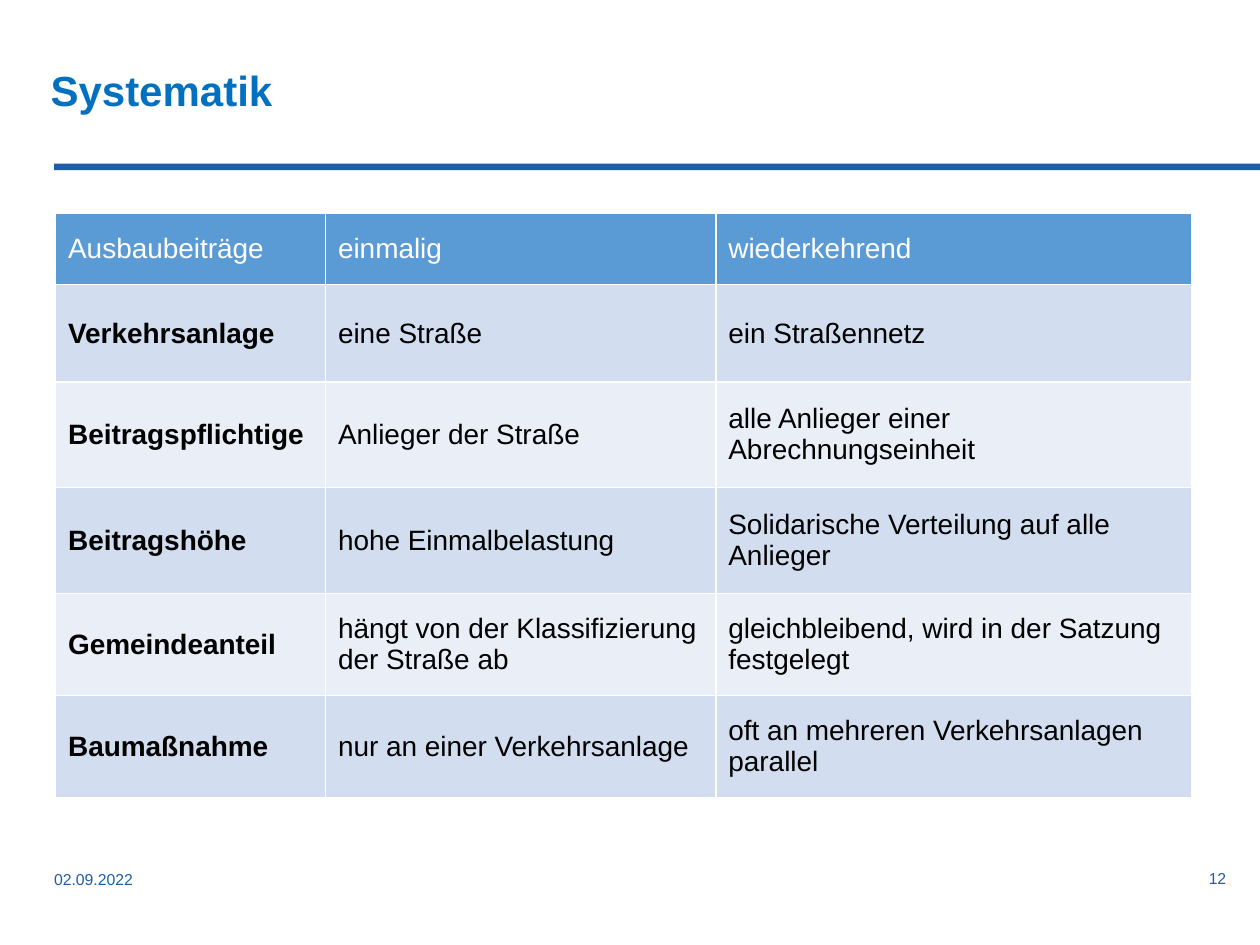
from dataclasses import dataclass

from lxml.etree import SubElement
from pptx import Presentation
from pptx.dml.color import RGBColor as RGB
from pptx.enum.shapes import MSO_SHAPE as Shape
from pptx.enum.text import MSO_ANCHOR as Anchor, PP_ALIGN as Align
from pptx.oxml.ns import qn
from pptx.util import Cm, Pt


@dataclass(frozen=True)
class Theme:
    font: str = "Arial"
    title: RGB = RGB(0x00, 0x70, 0xC0)
    accent: RGB = RGB(0x1F, 0x5D, 0xA6)
    header: RGB = RGB(0x5B, 0x9B, 0xD5)
    bands: tuple = (RGB(0xD2, 0xDE, 0xEF), RGB(0xEA, 0xEF, 0xF7))
    white: RGB = RGB(0xFF, 0xFF, 0xFF)
    black: RGB = RGB(0x00, 0x00, 0x00)
    title_size: Pt = Pt(24)
    table_size: Pt = Pt(16)
    footer_size: Pt = Pt(9)


THEME = Theme()

COLUMN_WIDTHS = (5.44, 7.87, 9.6)
ROW_HEIGHTS = (1.45, 1.96, 2.13, 2.13, 2.06, 2.06)
COMPARISON = (
    ("Ausbaubeiträge", "einmalig", "wiederkehrend"),
    ("Verkehrsanlage", "eine Straße", "ein Straßennetz"),
    ("Beitragspflichtige", "Anlieger der Straße", "alle Anlieger einer Abrechnungseinheit"),
    ("Beitragshöhe", "hohe Einmalbelastung", "Solidarische Verteilung auf alle Anlieger"),
    ("Gemeindeanteil", "hängt von der Klassifizierung der Straße ab",
     "gleichbleibend, wird in der Satzung festgelegt"),
    ("Baumaßnahme", "nur an einer Verkehrsanlage", "oft an mehreren Verkehrsanlagen parallel"),
)


def apply_format(target, formats):
    for name, value in formats.items():
        setattr(target, name, value)


def style_font(paragraph, size, color, bold=False):
    apply_format(paragraph.font, {"name": THEME.font, "size": size, "bold": bold})
    paragraph.font.color.rgb = color


def add_label(slide, text, box, size, color, bold=False, frame_format=None, paragraph_format=None):
    frame = slide.shapes.add_textbox(*map(Cm, box)).text_frame
    apply_format(frame, {"word_wrap": True, "vertical_anchor": Anchor.MIDDLE} | (frame_format or {}))
    paragraph = frame.paragraphs[0]
    paragraph.text = text
    apply_format(paragraph, paragraph_format or {})
    style_font(paragraph, size, color, bold)


def add_rule(slide, box):
    rule = slide.shapes.add_shape(Shape.RECTANGLE, *map(Cm, box))
    rule.shadow.inherit = False
    rule.fill.solid()
    rule.fill.fore_color.rgb = THEME.accent
    rule.line.fill.background()


def add_borders(cell, color, width):
    """Draw all four cell edges; call before setting the fill."""
    properties = cell._tc.get_or_add_tcPr()
    for edge in ("a:lnL", "a:lnR", "a:lnT", "a:lnB"):
        line = SubElement(properties, qn(edge), w=str(width))
        SubElement(SubElement(line, qn("a:solidFill")), qn("a:srgbClr"), val=str(color))


def fill_cell(cell, text, fill, color, bold):
    cell.text = text
    cell.vertical_anchor = Anchor.MIDDLE
    style_font(cell.text_frame.paragraphs[0], THEME.table_size, color, bold)
    add_borders(cell, THEME.white, Pt(1))
    cell.fill.solid()
    cell.fill.fore_color.rgb = fill


def add_comparison(slide, left, top):
    size = sum(COLUMN_WIDTHS), sum(ROW_HEIGHTS)
    table = slide.shapes.add_table(len(ROW_HEIGHTS), len(COLUMN_WIDTHS),
                                   *map(Cm, (left, top, *size))).table
    for column, width in zip(table.columns, COLUMN_WIDTHS):
        column.width = Cm(width)
    for row, height in zip(table.rows, ROW_HEIGHTS):
        row.height = Cm(height)
    for r, entries in enumerate(COMPARISON):
        is_header = r == 0
        fill = THEME.header if is_header else THEME.bands[(r - 1) % 2]
        color = THEME.white if is_header else THEME.black
        for c, text in enumerate(entries):
            fill_cell(table.cell(r, c), text, fill, color, bold=c == 0 and not is_header)


def main():
    deck = Presentation()
    apply_format(deck, {"slide_width": Cm(25.4), "slide_height": Cm(19.05)})
    slide = deck.slides.add_slide(deck.slide_layouts[6])

    add_rule(slide, (1.09, 3.3, 24.31, 0.13))
    add_label(slide, "12", (19.25, 17.2, 5.72, 1.02), THEME.footer_size, THEME.accent,
              paragraph_format={"alignment": Align.RIGHT})
    add_comparison(slide, 1.12, 4.29)
    add_label(slide, "Systematik", (0, 1.3, 18.69, 1.42), THEME.title_size, THEME.title, bold=True,
              frame_format={"vertical_anchor": Anchor.TOP, "margin_left": Cm(1.02)},
              paragraph_format={"line_spacing": 0.9})
    add_label(slide, "02.09.2022", (0.84, 17.22, 5.72, 1.02), THEME.footer_size, THEME.accent)

    deck.save("out.pptx")


if __name__ == "__main__":
    main()
